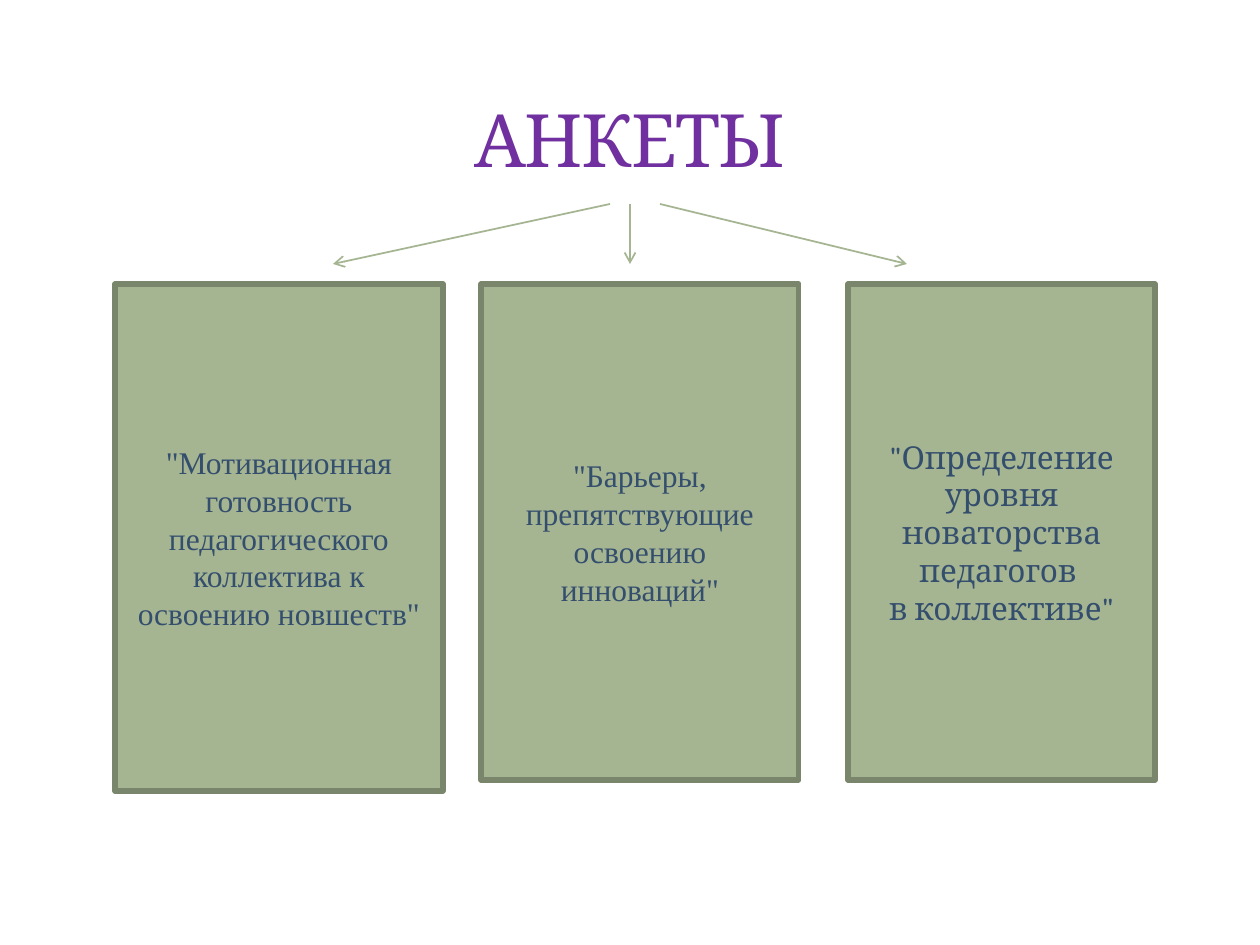
from lxml import etree
from pptx import Presentation
from pptx.dml.color import RGBColor
from pptx.enum.shapes import MSO_CONNECTOR, MSO_SHAPE
from pptx.enum.text import MSO_ANCHOR, PP_ALIGN
from pptx.oxml.ns import qn
from pptx.util import Emu, Pt

RECT = MSO_SHAPE.RECTANGLE
STRAIGHT = MSO_CONNECTOR.STRAIGHT
CENTER = PP_ALIGN.CENTER
MIDDLE, BOTTOM = MSO_ANCHOR.MIDDLE, MSO_ANCHOR.BOTTOM
PX = 914400 / 126
GREEN, BORDER, NAVY, PURPLE = "A5B592", "7A866C", "344E6D", "7030A0"


def px(*values):
    """Turn pixel lengths into EMU."""
    return [Emu(round(v * PX)) for v in values]


def add_run(p, text, font, size, color):
    p.alignment = CENTER
    r = p.add_run()
    r.text = text
    r.font.name = font
    r.font.size = Pt(size)
    r.font.color.rgb = RGBColor.from_string(color)
    return r


prs = Presentation()
prs.slide_width, prs.slide_height = px(1260, 945)
s = prs.slides.add_slide(prs.slide_layouts[5])

# Title
title = s.shapes.title
title.left, title.top, title.width, title.height = px(63, 21, 1134, 168)
tf = title.text_frame
tf.vertical_anchor = BOTTOM
r = add_run(tf.paragraphs[0], "АНКЕТЫ", "Cambria", 42, PURPLE)
r._r.get_or_add_rPr().set("spc", "-100")

# Questionnaire boxes: left, width, height, font, paragraphs
boxes = [
    (115, 328, 507, "Times New Roman",
     ['"Мотивационная готовность педагогического коллектива к освоению новшеств"']),
    (481, 318, 496, "Times New Roman",
     ['"Барьеры, препятствующие освоению инноваций"']),
    (848, 307, 496, "Cambria",
     ['"Определение уровня новаторства педагогов ', 'в коллективе"']),
]
for left, width, height, font, lines in boxes:
    sp = s.shapes.add_shape(RECT, *px(left, 284, width, height))
    sp.shadow.inherit = False
    sp.fill.solid()
    sp.fill.fore_color.rgb = RGBColor.from_string(GREEN)
    sp.line.color.rgb = RGBColor.from_string(BORDER)
    sp.line.width = Pt(3)
    tf = sp.text_frame
    tf.word_wrap = True
    tf.vertical_anchor = MIDDLE
    for i, line in enumerate(lines):
        p = tf.add_paragraph() if i else tf.paragraphs[0]
        add_run(p, line, font, 18, NAVY)

# Arrows from the title towards the boxes
for start, end in [(610, 333), (630, 630), (660, 907)]:
    arrow = s.shapes.add_connector(STRAIGHT, *px(start, 204, end, 264))
    arrow.line.color.rgb = RGBColor.from_string(GREEN)
    arrow.line.width = Pt(1)
    ln = arrow.line._get_or_add_ln()
    etree.SubElement(ln, qn("a:tailEnd"), type="arrow")
    etree.SubElement(arrow._element.spPr, qn("a:effectLst"))

prs.save("out.pptx")
